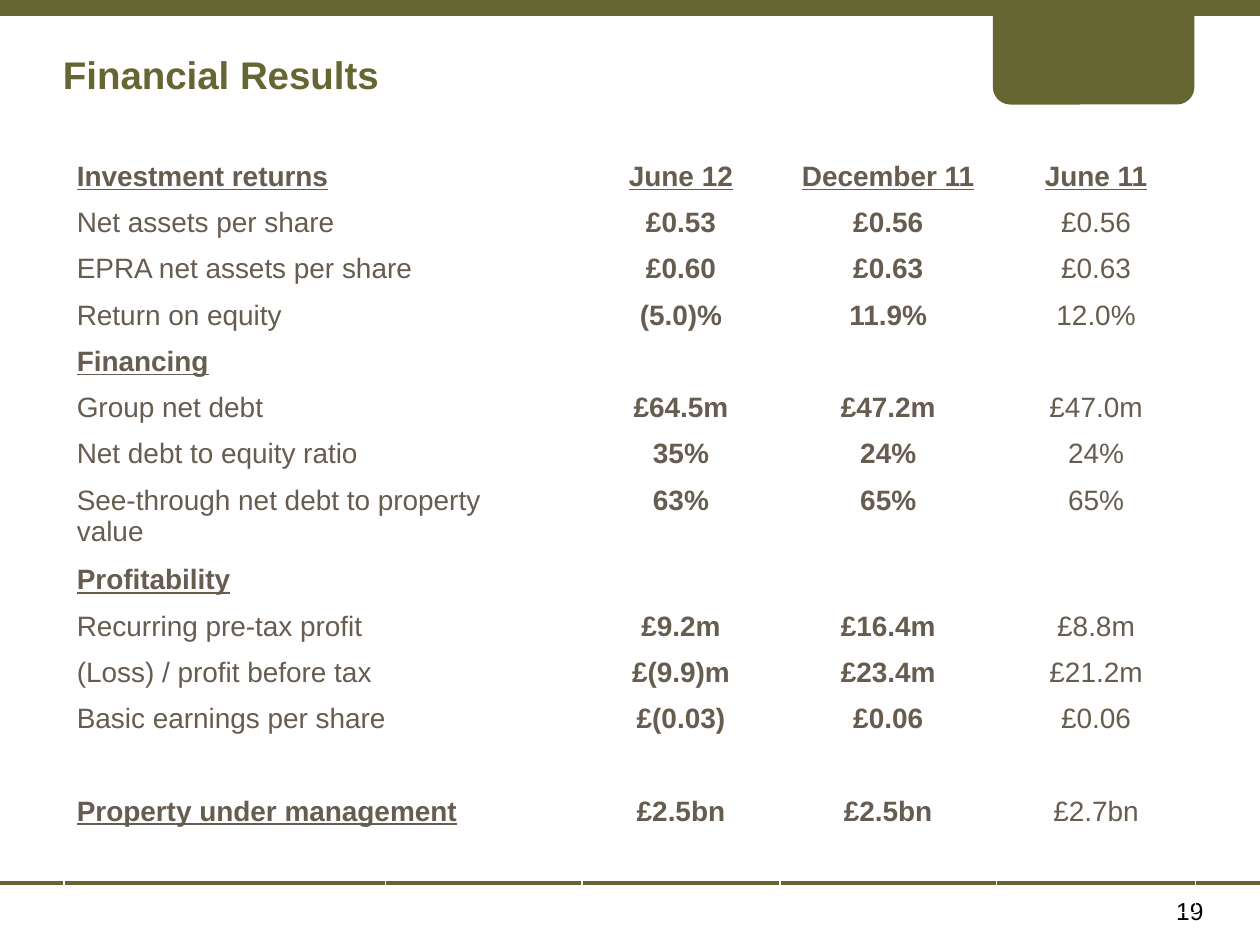
from dataclasses import dataclass

from lxml import etree
from pptx import Presentation
from pptx import util as u
from pptx.dml.color import RGBColor
from pptx.enum import shapes, text
from pptx.oxml.ns import qn


@dataclass(frozen=True)
class Theme:
    font: str = "Arial"
    olive: RGBColor = RGBColor(0x66, 0x66, 0x33)
    brown: RGBColor = RGBColor(0x66, 0x5C, 0x4F)
    black: RGBColor = RGBColor(0, 0, 0)
    title: int = 22
    body: int = 16
    page: int = 14


@dataclass(frozen=True)
class Row:
    label: str = ""
    values: tuple[str, ...] = ()
    head: bool = False   # bold, underlined label
    years: bool = False  # values are column headings
    edge: bool = False   # label column stays narrow
    high: float = 0      # own height; 0 means an equal share


THEME = Theme()
LEFT, MID, RIGHT = text.PP_ALIGN.LEFT, text.PP_ALIGN.CENTER, text.PP_ALIGN.RIGHT
HIGH = 6.4
COLS = (2.55, 1.09, 0.47, 1.57, 1.72, 1.58)
ROWS = (
    Row(edge=True, high=0.39),
    Row("Investment returns", ("June 12", "December 11", "June 11"),
        head=True, years=True, edge=True),
    Row("Net assets per share", ("£0.53", "£0.56", "£0.56")),
    Row("EPRA net assets per share", ("£0.60", "£0.63", "£0.63")),
    Row("Return on equity", ("(5.0)%", "11.9%", "12.0%")),
    Row("Financing", head=True),
    Row("Group net debt", ("£64.5m", "£47.2m", "£47.0m")),
    Row("Net debt to equity ratio", ("35%", "24%", "24%")),
    Row("See-through net debt to property value", ("63%", "65%", "65%"), high=0.63),
    Row("Profitability", head=True),
    Row("Recurring pre-tax profit", ("£9.2m", "£16.4m", "£8.8m")),
    Row("(Loss) / profit before tax", ("£(9.9)m", "£23.4m", "£21.2m")),
    Row("Basic earnings per share", ("£(0.03)", "£0.06", "£0.06")),
    Row(),
    Row("Property under management", ("£2.5bn", "£2.5bn", "£2.7bn"), head=True),
    Row(edge=True, high=0.61),
)


def style(para, size: int, color: RGBColor, bold=False, under=False, align=LEFT) -> None:
    para.alignment = align
    for run in para.runs:
        font = run.font
        font.name, font.size = THEME.font, u.Pt(size)
        font.bold, font.underline = bold, under
        font.color.rgb = color


def add_rule(slide, y: float, width: float) -> None:
    line = slide.shapes.add_connector(
        shapes.MSO_CONNECTOR.STRAIGHT, 0, u.Inches(y), u.Inches(10), u.Inches(y))
    line.line.color.rgb = THEME.olive
    line.line.width = u.Pt(width)
    etree.SubElement(line._element.spPr, qn("a:effectLst"))


def add_tab(slide) -> None:
    tab = slide.shapes.add_shape(
        shapes.MSO_SHAPE.ROUNDED_RECTANGLE,
        u.Inches(7.88), 0, u.Inches(1.6), u.Inches(0.83))
    tab.adjustments[0] = 0.167
    tab.shadow.inherit = False
    tab.fill.solid()
    tab.fill.fore_color.rgb = THEME.olive
    tab.line.fill.background()


def add_text(slide, box: tuple[float, ...], words: str):
    frame = slide.shapes.add_textbox(*map(u.Inches, box)).text_frame
    frame.word_wrap = True
    frame.text = words
    return frame


def add_title(slide) -> None:
    frame = add_text(slide, (0.5, 0.3, 7.26, 0.58), "Financial Results")
    frame.vertical_anchor = text.MSO_ANCHOR.MIDDLE
    frame.margin_left = frame.margin_top = frame.margin_bottom = 0
    frame.margin_right = u.Inches(0.04)
    para = frame.paragraphs[0]
    style(para, THEME.title, THEME.olive, bold=True)
    props = para._p.get_or_add_pPr()
    props.set("marL", str(u.Inches(0.04)))
    props.set("indent", str(u.Inches(-0.04)))


def fill_cell(cell, words: str, bold=False, under=False, align=LEFT) -> None:
    cell.text = words
    style(cell.text_frame.paragraphs[0], THEME.body, THEME.brown, bold, under, align)


def add_results(slide) -> None:
    frame = slide.shapes.add_table(
        len(ROWS), len(COLS), u.Inches(0.51), u.Inches(0.84),
        u.Inches(sum(COLS)), u.Inches(HIGH))
    table = frame.table
    table.first_row = table.horz_banding = False
    for col, wide in zip(table.columns, COLS):
        col.width = u.Inches(wide)

    # Rows without a height of their own share what is left
    share = (HIGH - sum(r.high for r in ROWS)) / sum(not r.high for r in ROWS)
    for i, row in enumerate(ROWS):
        table.rows[i].height = u.Inches(row.high or share)
        for cell in table.rows[i].cells:
            cell.fill.background()
            # Keep empty cells from stretching the row
            end = etree.SubElement(cell.text_frame.paragraphs[0]._p, qn("a:endParaRPr"))
            end.set("sz", str(THEME.body * 100))
        start = 1 if row.edge else 0
        table.cell(i, start).merge(table.cell(i, start + 1))
        if row.label:
            fill_cell(table.cell(i, 0), row.label, row.head, row.head)
        for j, value in enumerate(row.values):
            bold = row.years or j < 2
            fill_cell(table.cell(i, j + 3), value, bold, row.years, MID)


def main() -> None:
    deck = Presentation()
    deck.slide_width, deck.slide_height = u.Inches(10), u.Inches(7.5)
    slide = deck.slides.add_slide(deck.slide_layouts[6])

    # Frame
    add_rule(slide, 7.01, 2)
    add_tab(slide)
    add_rule(slide, 0.06, 10)

    # Page number
    page = add_text(slide, (8.3, 7.06, 1.35, 0.36), "19")
    style(page.paragraphs[0], THEME.page, THEME.black, align=RIGHT)

    # Content
    add_title(slide)
    add_results(slide)
    deck.save("out.pptx")


if __name__ == "__main__":
    main()
